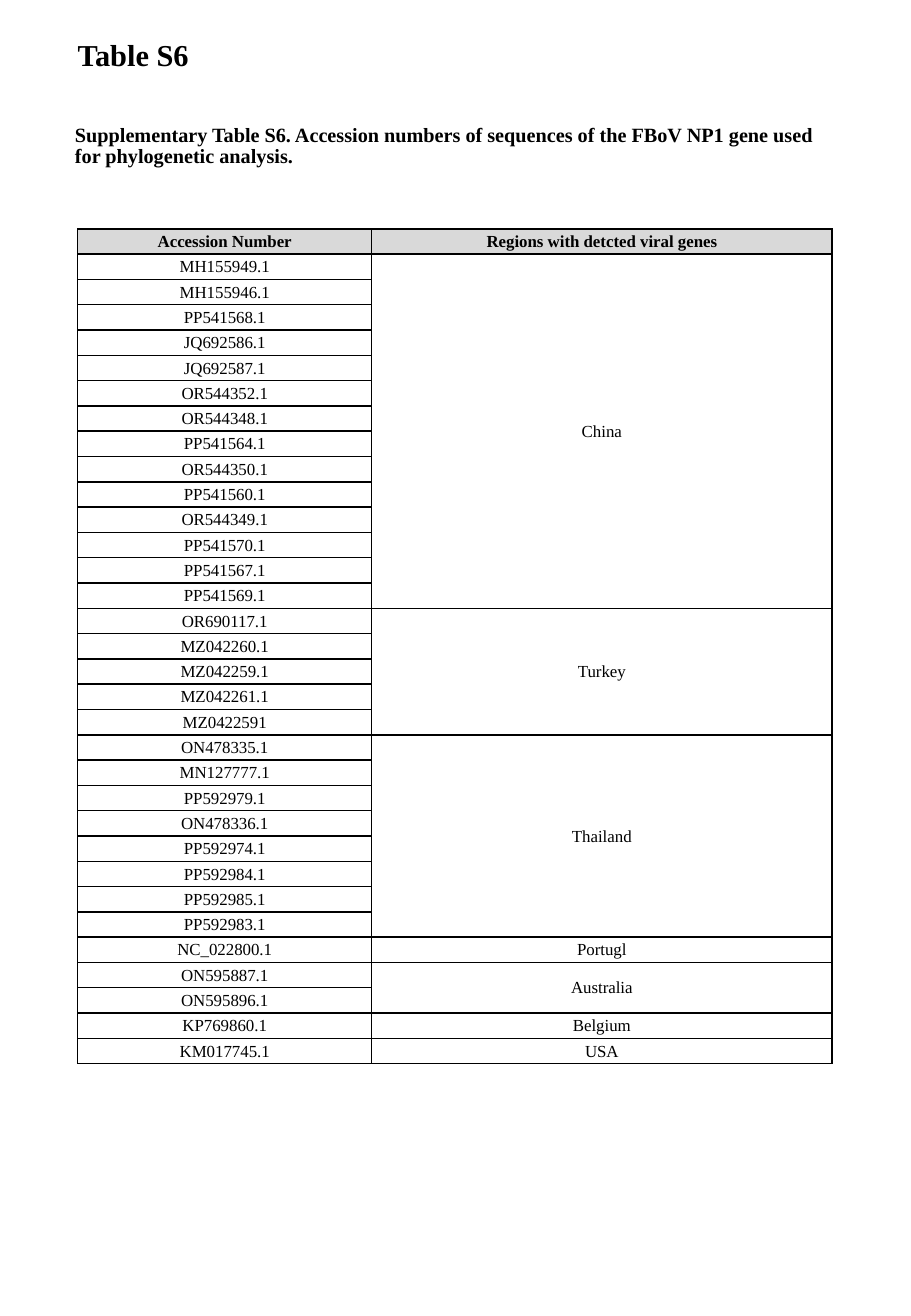
from lxml import etree
from pptx import Presentation
from pptx import util as u
from pptx.dml.color import RGBColor
from pptx.enum import text
from pptx.oxml import ns

FONT = "Times New Roman"
BLACK = "000000"
HEADER_FILL = "D9D9D9"
ROW_HEIGHT = 15
COLUMN_WIDTHS = (174.2, 272.9)
HEADINGS = ("Accession Number", "Regions with detcted viral genes")
REGIONS = {
    "China": """MH155949.1 MH155946.1 PP541568.1 JQ692586.1 JQ692587.1 OR544352.1
                OR544348.1 PP541564.1 OR544350.1 PP541560.1 OR544349.1 PP541570.1
                PP541567.1 PP541569.1""",
    "Turkey": "OR690117.1 MZ042260.1 MZ042259.1 MZ042261.1 MZ0422591",
    "Thailand": """ON478335.1 MN127777.1 PP592979.1 ON478336.1 PP592974.1 PP592984.1
                   PP592985.1 PP592983.1""",
    "Portugl": "NC_022800.1",
    "Australia": "ON595887.1 ON595896.1",
    "Belgium": "KP769860.1",
    "USA": "KM017745.1",
}


def color(hex_code):
    return RGBColor.from_string(hex_code)


def style_font(p, size, bold):
    p.font.name = FONT
    p.font.size = u.Pt(size)
    p.font.bold = bold
    p.font.color.rgb = color(BLACK)


def add_text(s, box, content, size, anchor=text.MSO_ANCHOR.TOP):
    """Add a bold text box and return its paragraph."""
    tf = s.shapes.add_textbox(*map(u.Pt, box)).text_frame
    tf.word_wrap = True
    tf.vertical_anchor = anchor
    p = tf.paragraphs[0]
    p.text = content
    style_font(p, size, True)
    return p


def add_borders(cell, width=1):
    """Draw all four cell borders; they must precede the fill in tcPr."""
    tc_pr = cell._tc.get_or_add_tcPr()
    for i, side in enumerate(("lnL", "lnR", "lnT", "lnB")):
        line = etree.Element(ns.qn(f"a:{side}"), w=str(u.Pt(width)))
        fill = etree.SubElement(line, ns.qn("a:solidFill"))
        etree.SubElement(fill, ns.qn("a:srgbClr"), val=BLACK)
        tc_pr.insert(i, line)


def format_cell(cell, header):
    cell.margin_left = cell.margin_right = cell.margin_top = u.Pt(0.5)
    cell.margin_bottom = u.Pt(0)
    cell.vertical_anchor = text.MSO_ANCHOR.MIDDLE
    if header:
        cell.fill.solid()
        cell.fill.fore_color.rgb = color(HEADER_FILL)
    else:
        cell.fill.background()
    add_borders(cell)
    p = cell.text_frame.paragraphs[0]
    p.alignment = text.PP_ALIGN.CENTER
    style_font(p, 10, header)


def add_accession_table(s, left, top):
    groups = [(region, codes.split()) for region, codes in REGIONS.items()]
    rows = 1 + sum(len(codes) for _, codes in groups)
    table = s.shapes.add_table(rows, len(HEADINGS), u.Pt(left), u.Pt(top),
                               u.Pt(sum(COLUMN_WIDTHS)), u.Pt(rows * ROW_HEIGHT)).table
    table.horz_banding = False
    for column, width in zip(table.columns, COLUMN_WIDTHS):
        column.width = u.Pt(width)
    for i, heading in enumerate(HEADINGS):
        table.cell(0, i).text = heading
    first = 1
    for region, codes in groups:
        for i, code in enumerate(codes, first):
            table.cell(i, 0).text = code
        table.cell(first, 1).text = region
        last = first + len(codes) - 1
        if last > first:
            table.cell(first, 1).merge(table.cell(last, 1))
        first = last + 1
    for i, row in enumerate(table.rows):
        row.height = u.Pt(ROW_HEIGHT)
        for cell in row.cells:
            format_cell(cell, header=i == 0)


def main():
    prs = Presentation()
    prs.slide_width, prs.slide_height = u.Pt(540), u.Pt(780)
    s = prs.slides.add_slide(prs.slide_layouts[6])
    add_accession_table(s, 46.1, 135.6)
    caption = add_text(s, (37.4, 57.6, 465.8, 58.3),
                       "Supplementary Table S6. Accession numbers of sequences of the "
                       "FBoV NP1 gene used for phylogenetic analysis.",
                       12, text.MSO_ANCHOR.MIDDLE)
    caption.line_spacing = 0.9
    caption.space_after = u.Pt(6)
    add_text(s, (38.9, 18, 116.6, 28.8), "Table S6", 18)
    prs.save("out.pptx")


if __name__ == "__main__":
    main()
